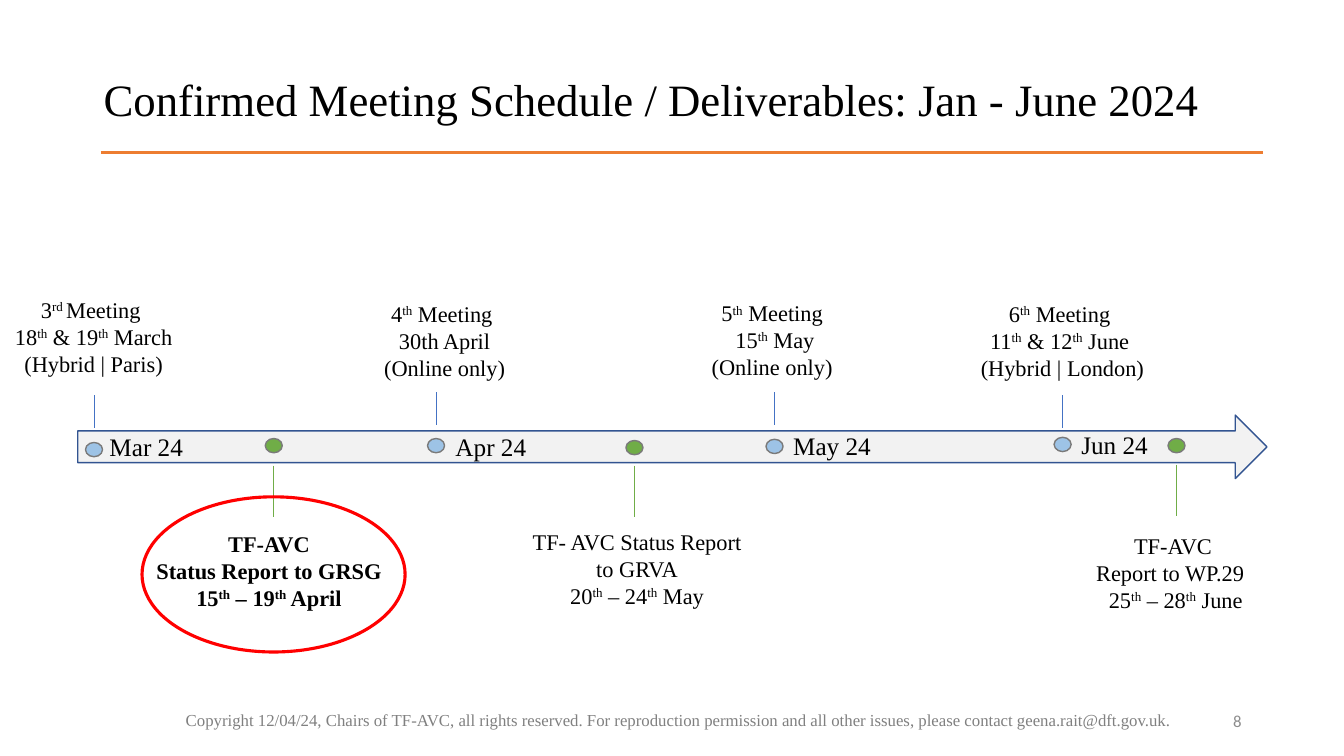
import pptx
import pptx.util
import pptx.dml.color
import pptx.enum.shapes
import pptx.enum.text
import pptx.oxml
import pptx.oxml.ns

Cm = pptx.util.Cm
Pt = pptx.util.Pt
SHAPE = pptx.enum.shapes.MSO_SHAPE
ALIGN = pptx.enum.text.PP_ALIGN
ANCHOR = pptx.enum.text.MSO_ANCHOR

SERIF = "Times New Roman"
NOTE_HEIGHT = 2.31
DOT_WIDTH, DOT_HEIGHT = 0.43, 0.36

MEETING_STYLE = {"dot": "9DC3E6", "stem": "4472C4", "length": 0.83, "wrap": False}
REPORT_STYLE = {"dot": "70AD47", "stem": "70AD47", "length": 1.3, "wrap": True}

MONTHS = [
    ("Mar 24", 0.55, 0.28),
    ("Apr 24", 9.27, 0.28),
    ("May 24", 17.78, 0.26),
    ("Jun 24", 25.04, 0.23),
]

MEETINGS = [
    {"centre": 0.41, "dot_top": 0.69, "stem_top": -0.5, "note": (-1.91, -3.12, 4.62),
     "lines": ["3^rd ^Meeting ", "18^th^ & 19^th^ March", "(Hybrid | Paris)"]},
    {"centre": 9.03, "dot_top": 0.59, "stem_top": -0.58, "note": (7.44, -3.02, 3.61),
     "lines": ["4^th^ Meeting ", "30th April", "(Online only)"]},
    {"centre": 17.56, "dot_top": 0.61, "stem_top": -0.58, "note": (15.69, -3.04, 3.76),
     "lines": ["5^th^ Meeting ", "15^th^ May", "(Online only) "]},
    {"centre": 24.82, "dot_top": 0.56, "stem_top": -0.5, "note": (21.59, -3.02, 6.45),
     "lines": ["6^th^ Meeting ", "11^th^ & 12^th^ June ", "(Hybrid | London)"]},
]

REPORTS = [
    {"centre": 4.94, "dot_top": 0.59, "stem_top": 1.27, "note": (1.7, 2.77, 6.38), "bold": True,
     "lines": ["TF-AVC ", "Status Report to GRSG ", "15^th^ – 19^th^ April "]},
    {"centre": 14.03, "dot_top": 0.64, "stem_top": 1.27, "note": (11.15, 2.72, 5.89),
     "lines": ["TF- AVC Status Report to GRVA", "20^th^ – 24^th^ May"]},
    {"centre": 27.69, "dot_top": 0.59, "stem_top": 1.25, "note": (24.61, 2.82, 6.12),
     "lines": ["TF-AVC ", "Report to WP.29  ", "25^th^ – 28^th^ June"]},
]


def colour(value):
    """Turn a hex string into a colour."""
    return pptx.dml.color.RGBColor.from_string(value)


def add_text(page, box, lines, size, ink="000000", align=ALIGN.LEFT,
             anchor=ANCHOR.TOP, wrap=True, font=SERIF, bold=False, spacing=1.0):
    """Add a text box whose lines mark superscripts between carets."""
    frame = page.shapes.add_textbox(*map(Cm, box)).text_frame
    frame.word_wrap = wrap
    frame.vertical_anchor = anchor
    for index, line in enumerate(lines):
        para = frame.add_paragraph() if index else frame.paragraphs[0]
        para.alignment = align
        para.line_spacing = spacing
        for position, part in enumerate(line.split("^")):
            if not part:
                continue
            span = para.add_run()
            span.text = part
            for name, value in {"name": font, "size": Pt(size), "bold": bold}.items():
                setattr(span.font, name, value)
            span.font.color.rgb = colour(ink)
            if position % 2:
                span.font._element.set("baseline", "30000")


def add_outline(page, kind, box, fill, line, width):
    """Add a preset shape with an optional fill."""
    shape = page.shapes.add_shape(kind, *map(Cm, box))
    shape.shadow.inherit = False
    if fill:
        shape.fill.solid()
        shape.fill.fore_color.rgb = colour(fill)
    else:
        shape.fill.background()
    shape.line.color.rgb = colour(line)
    shape.line.width = Pt(width)


def add_line(page, start, end, ink, width):
    """Add a straight line without a shadow."""
    line = page.shapes.add_connector(
        pptx.enum.shapes.MSO_CONNECTOR.STRAIGHT, *map(Cm, start + end))
    line.line.color.rgb = colour(ink)
    line.line.width = Pt(width)
    line._element.spPr.append(pptx.oxml.parse_xml(
        "<a:effectLst %s/>" % pptx.oxml.ns.nsdecls("a")))


def add_header(page, box):
    """Place the title and the rule under it."""
    left, top, width, height = box
    add_text(page, box, ["Confirmed Meeting Schedule / Deliverables: Jan - June 2024"],
             32, anchor=ANCHOR.MIDDLE, spacing=0.9)
    rule_left, rule_top = left + 0.18, top + 3.1
    add_line(page, (rule_left, rule_top), (rule_left + 29.29, rule_top), "ED7D31", 2.25)


def add_event(page, left, top, event, style):
    """Place one event's dot, stem and note relative to the timeline corner."""
    centre = left + event["centre"]
    dot_box = (centre - DOT_WIDTH / 2, top + event["dot_top"], DOT_WIDTH, DOT_HEIGHT)
    add_outline(page, SHAPE.OVAL, dot_box, style["dot"], "7A7A7A", 1)
    stem_top = top + event["stem_top"]
    add_line(page, (centre, stem_top), (centre, stem_top + style["length"]), style["stem"], 0.5)
    note_left, note_top, note_width = event["note"]
    add_text(page, (left + note_left, top + note_top, note_width, NOTE_HEIGHT),
             event["lines"], 16, align=ALIGN.CENTER, wrap=style["wrap"],
             bold=event.get("bold", False))


def add_timeline(page, box):
    """Place the arrow, its months, all events and the highlight ring."""
    left, top, width, height = box
    add_outline(page, SHAPE.RIGHT_ARROW, box, "F2F2F2", "325491", 1)
    for month, month_left, month_top in MONTHS:
        add_text(page, (left + month_left, top + month_top, 2.49, 1.02), [month], 18)
    for events, style in ((MEETINGS, MEETING_STYLE), (REPORTS, REPORT_STYLE)):
        for event in events:
            add_event(page, left, top, event, style)
    add_outline(page, SHAPE.OVAL, (left + 1.62, top + 2.06, 6.63, 3.91), None, "FF0000", 2.25)


def add_footer(page, box):
    """Place the copyright line and the page number."""
    left, top, width, height = box
    add_text(page, box, [
        "Copyright 12/04/24, Chairs of TF-AVC, all rights reserved. For reproduction "
        "permission and all other issues, please contact geena.rait@dft.gov.uk. "],
        12, "808080", ALIGN.CENTER, ANCHOR.MIDDLE)
    add_text(page, (left + width - 6.99, top + 0.02, 7.6, height), ["8"],
             12, "8C8C8C", ALIGN.RIGHT, ANCHOR.MIDDLE, font="Calibri")


def main():
    """Build the schedule slide and save it."""
    deck = pptx.Presentation()
    deck.slide_width, deck.slide_height = Cm(33.87), Cm(19.05)
    page = deck.slides.add_slide(deck.slide_layouts[6])
    add_header(page, (2.36, 0.74, 32.16, 3.68))
    add_timeline(page, (1.96, 10.46, 29.97, 1.6))
    add_footer(page, (3.4, 17.63, 27.53, 1.02))
    deck.save("out.pptx")


if __name__ == "__main__":
    main()
